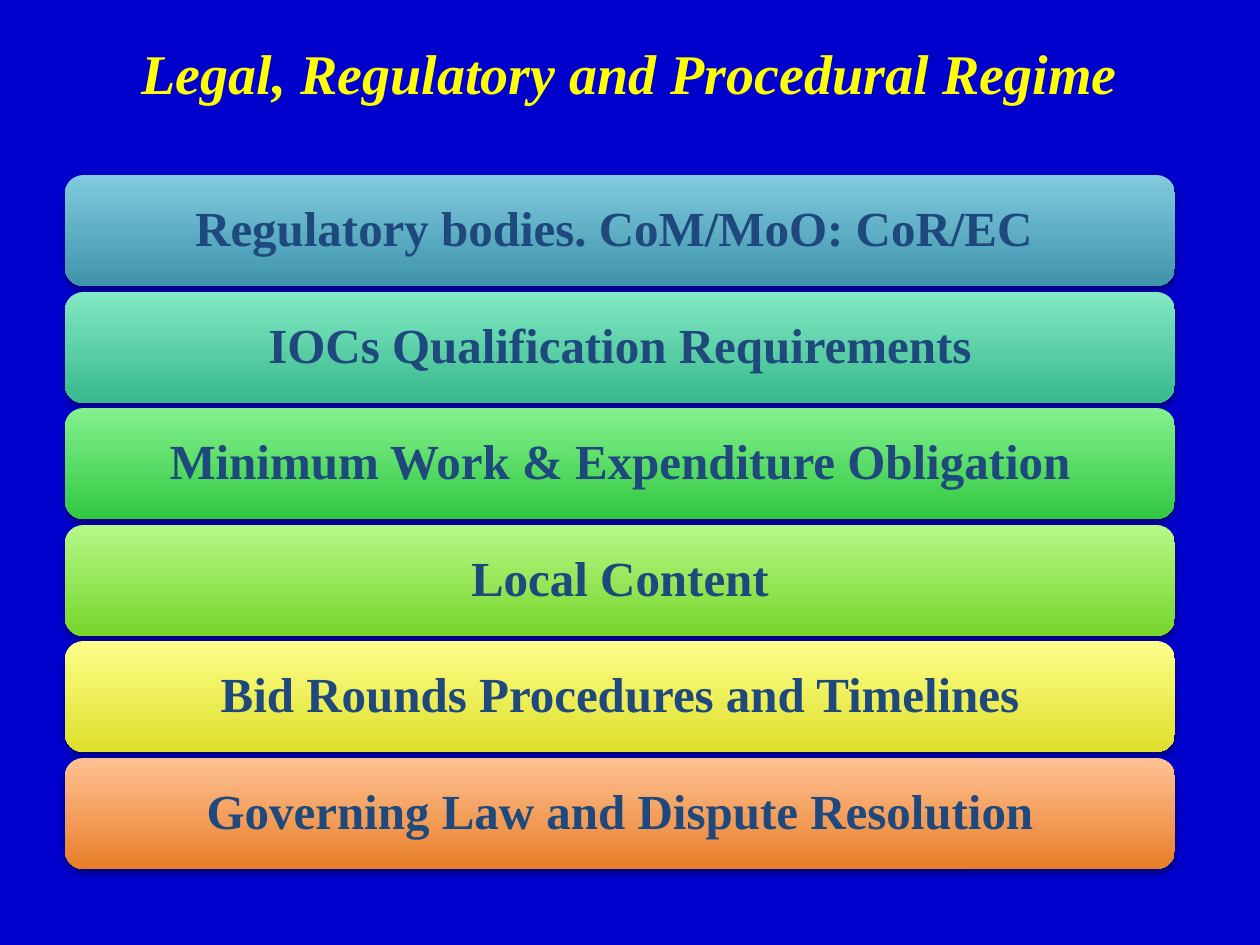
from dataclasses import dataclass

from lxml.etree import SubElement
from pptx import Presentation
from pptx.dml.color import RGBColor
from pptx.enum.shapes import MSO_SHAPE
from pptx.enum.text import MSO_ANCHOR, PP_ALIGN
from pptx.oxml.ns import qn
from pptx.shapes.autoshape import Shape
from pptx.slide import Slide
from pptx.util import Emu, Pt

EMU_PER_PX = 914400 / 126
FONT = "Times New Roman"
BACKGROUND = RGBColor(0x00, 0x00, 0xCC)
TITLE_YELLOW = RGBColor(0xFF, 0xFF, 0x00)
LABEL_NAVY = RGBColor(0x1F, 0x49, 0x7D)

BAR_LEFT, BAR_WIDTH, BAR_HEIGHT = 65, 1110, 111
FIRST_BAR_TOP, LAST_BAR_TOP = 175, 758


@dataclass(frozen=True)
class Bar:
    label: str
    light: RGBColor
    dark: RGBColor


BARS = [
    Bar("Regulatory bodies. CoM/MoO: CoR/EC ", RGBColor(0x81, 0xCA, 0xDF), RGBColor(0x3E, 0x94, 0xAB)),
    Bar("IOCs Qualification Requirements", RGBColor(0x82, 0xE9, 0xC3), RGBColor(0x38, 0xB9, 0x8D)),
    Bar("Minimum Work & Expenditure Obligation", RGBColor(0x84, 0xF1, 0x8E), RGBColor(0x31, 0xC8, 0x41)),
    Bar("Local Content", RGBColor(0xB6, 0xF8, 0x87), RGBColor(0x77, 0xD6, 0x2B)),
    Bar("Bid Rounds Procedures and Timelines", RGBColor(0xFE, 0xFF, 0x8B), RGBColor(0xDE, 0xDF, 0x29)),
    Bar("Governing Law and Dispute Resolution", RGBColor(0xFF, 0xC2, 0x95), RGBColor(0xE8, 0x7E, 0x27)),
]


def px(length: int) -> Emu:
    return Emu(round(length * EMU_PER_PX))


def set_text(shape: Shape, text: str, size: int, color: RGBColor, anchor: MSO_ANCHOR, italic: bool = False) -> None:
    frame = shape.text_frame
    frame.text = text
    frame.word_wrap = True
    frame.vertical_anchor = anchor
    paragraph = frame.paragraphs[0]
    paragraph.alignment = PP_ALIGN.CENTER
    font = paragraph.runs[0].font
    font.name = FONT
    font.size = Pt(size)
    font.bold = True
    font.italic = italic
    font.color.rgb = color


def add_soft_shadow(shape: Shape) -> None:
    shape.shadow.inherit = False
    effects = shape.element.spPr.find(qn("a:effectLst"))
    shadow = SubElement(effects, qn("a:outerShdw"), blurRad=str(Pt(4)), dist=str(Pt(2)), dir="5400000", rotWithShape="0")
    color = SubElement(shadow, qn("a:srgbClr"), val="000000")
    SubElement(color, qn("a:alpha"), val="38000")


def add_title(page: Slide, text: str) -> None:
    box = page.shapes.add_textbox(px(63), px(38), px(1134), px(117))
    set_text(box, text, 32, TITLE_YELLOW, MSO_ANCHOR.TOP, italic=True)
    box.text_frame.margin_top = 0


def add_bar(page: Slide, bar: Bar, top: int) -> None:
    shape = page.shapes.add_shape(
        MSO_SHAPE.ROUNDED_RECTANGLE, px(BAR_LEFT), px(top), px(BAR_WIDTH), px(BAR_HEIGHT)
    )
    shape.line.fill.background()
    shape.fill.gradient()
    shape.fill.gradient_angle = 270
    for stop, color, position in zip(shape.fill.gradient_stops, (bar.light, bar.dark), (0, 1)):
        stop.color.rgb = color
        stop.position = position
    add_soft_shadow(shape)
    set_text(shape, bar.label, 28, LABEL_NAVY, MSO_ANCHOR.MIDDLE)
    frame = shape.text_frame
    frame.margin_left = frame.margin_right = px(15)
    frame.margin_top = frame.margin_bottom = px(8)
    frame.paragraphs[0].line_spacing = 0.9


def main() -> None:
    deck = Presentation()
    deck.slide_width, deck.slide_height = px(1260), px(945)
    page = deck.slides.add_slide(deck.slide_layouts[6])
    page.background.fill.solid()
    page.background.fill.fore_color.rgb = BACKGROUND
    add_title(page, "Legal, Regulatory and Procedural Regime")
    pitch = (LAST_BAR_TOP - FIRST_BAR_TOP) / (len(BARS) - 1)
    for index, bar in enumerate(BARS):
        add_bar(page, bar, round(FIRST_BAR_TOP + index * pitch))
    deck.save("out.pptx")


if __name__ == "__main__":
    main()
